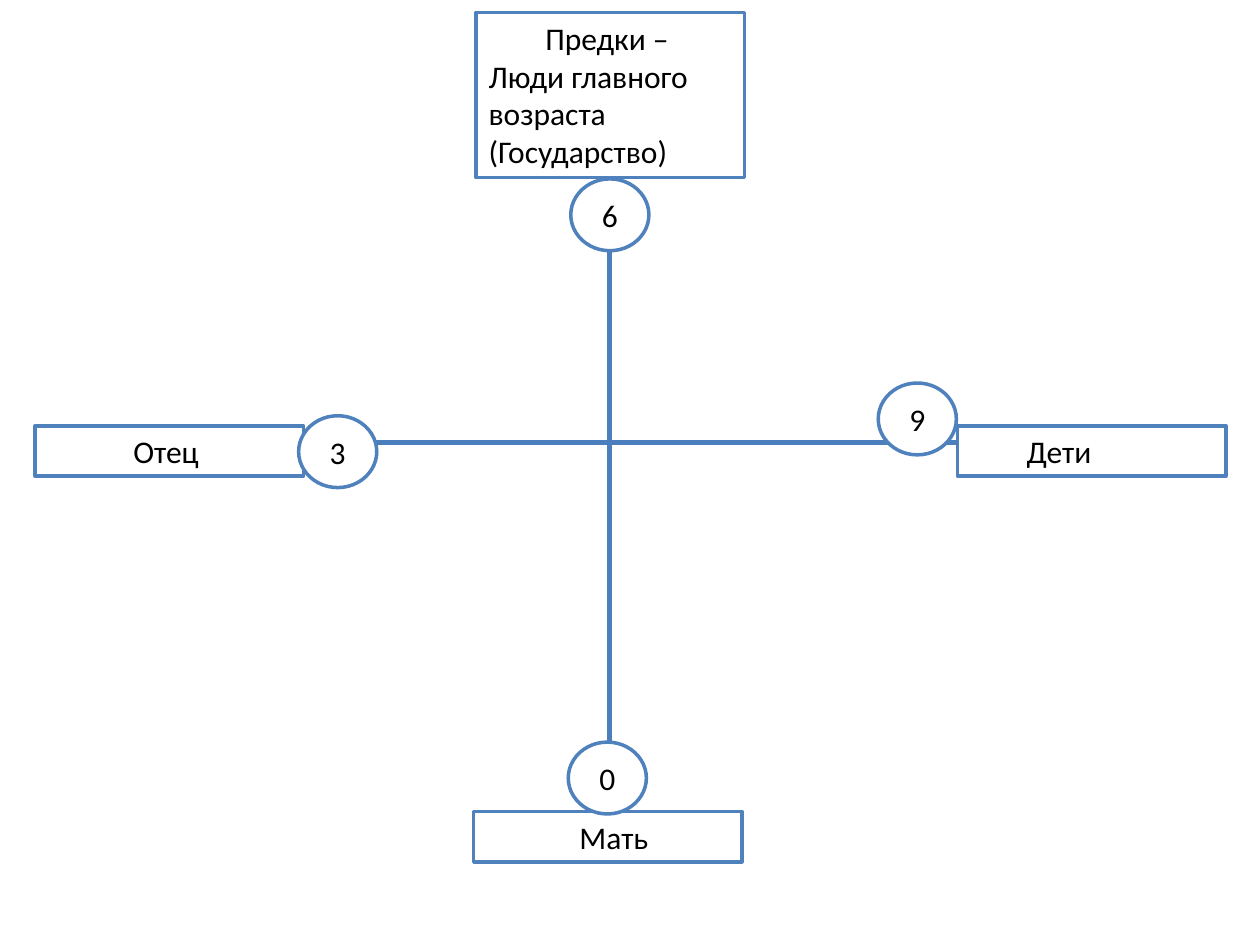
from dataclasses import dataclass

from pptx import Presentation
from pptx.dml.color import RGBColor as Color
from pptx.enum.shapes import MSO_CONNECTOR as Link, MSO_SHAPE as Shape
from pptx.enum.text import MSO_ANCHOR as Anchor, PP_ALIGN as Align
from pptx.oxml.ns import qn
from pptx.util import Pt

SCALE = 9144


@dataclass(frozen=True)
class Theme:
    font: str = "Calibri"
    size: int = 18
    ink: str = "000000"
    fill: str = "FFFFFF"
    edge: str = "4F81BD"
    axis: str = "4B7EBC"
    thin: int = 2
    thick: int = 3


THEME = Theme()


def px(*vals):
    return [val * SCALE for val in vals]


def rgb(code):
    return Color.from_string(code)


def add_node(slide, kind, box, text, align, anchor):
    node = slide.shapes.add_shape(kind, *px(*box))
    node.shadow.inherit = False
    node.fill.solid()
    node.fill.fore_color.rgb = rgb(THEME.fill)
    node.line.color.rgb = rgb(THEME.edge)
    node.line.width = Pt(THEME.thin)
    frame = node.text_frame
    frame.word_wrap = True
    frame.vertical_anchor = anchor
    para = frame.paragraphs[0]
    para.text = text
    para.alignment = align
    para.font.name = THEME.font
    para.font.size = Pt(THEME.size)
    para.font.color.rgb = rgb(THEME.ink)
    return para


def add_label(slide, box, text, indent):
    para = add_node(slide, Shape.RECTANGLE, box, text, Align.LEFT, Anchor.TOP)
    props = para._p.get_or_add_pPr()
    props.set("marL", "0")
    props.set("indent", str(indent * SCALE))


def add_badge(slide, left, top, text):
    box = (left, top, 62, 57)
    add_node(slide, Shape.OVAL, box, text, Align.CENTER, Anchor.MIDDLE)


def add_axis(slide, *ends):
    line = slide.shapes.add_connector(Link.STRAIGHT, *px(*ends))
    line.line.color.rgb = rgb(THEME.axis)
    line.line.width = Pt(THEME.thick)
    props = line._element.spPr
    props.append(props.makeelement(qn("a:effectLst"), {}))


def add_cross(slide, left, top, width, height):
    wide = 213
    labels = [
        (350, 0, 131, "Предки –Люди главного возраста (Государство)", 45),
        (width - wide, 328, 40, "Дети", 45),
        (348, height - 40, 40, "Мать", 74),
        (0, 328, 40, "Отец", 68),
    ]
    for dx, dy, tall, text, indent in labels:
        add_label(slide, (left + dx, top + dy, wide, tall), text, indent)

    mid_x, mid_y = left + 456, top + 341
    add_axis(slide, mid_x, top + 137, mid_x, top + height - 41)
    add_axis(slide, left + 220, mid_y, left + width - wide, mid_y)

    badges = [(669, 294, "9"), (425, 132, "6"), (209, 320, "3"), (423, 579, "0")]
    for dx, dy, text in badges:
        add_badge(slide, left + dx, top + dy, text)


def main():
    deck = Presentation()
    deck.slide_width, deck.slide_height = px(1000, 750)
    slide = deck.slides.add_slide(deck.slide_layouts[6])
    add_cross(slide, 28, 10, 945, 674)
    deck.save("out.pptx")


if __name__ == "__main__":
    main()
